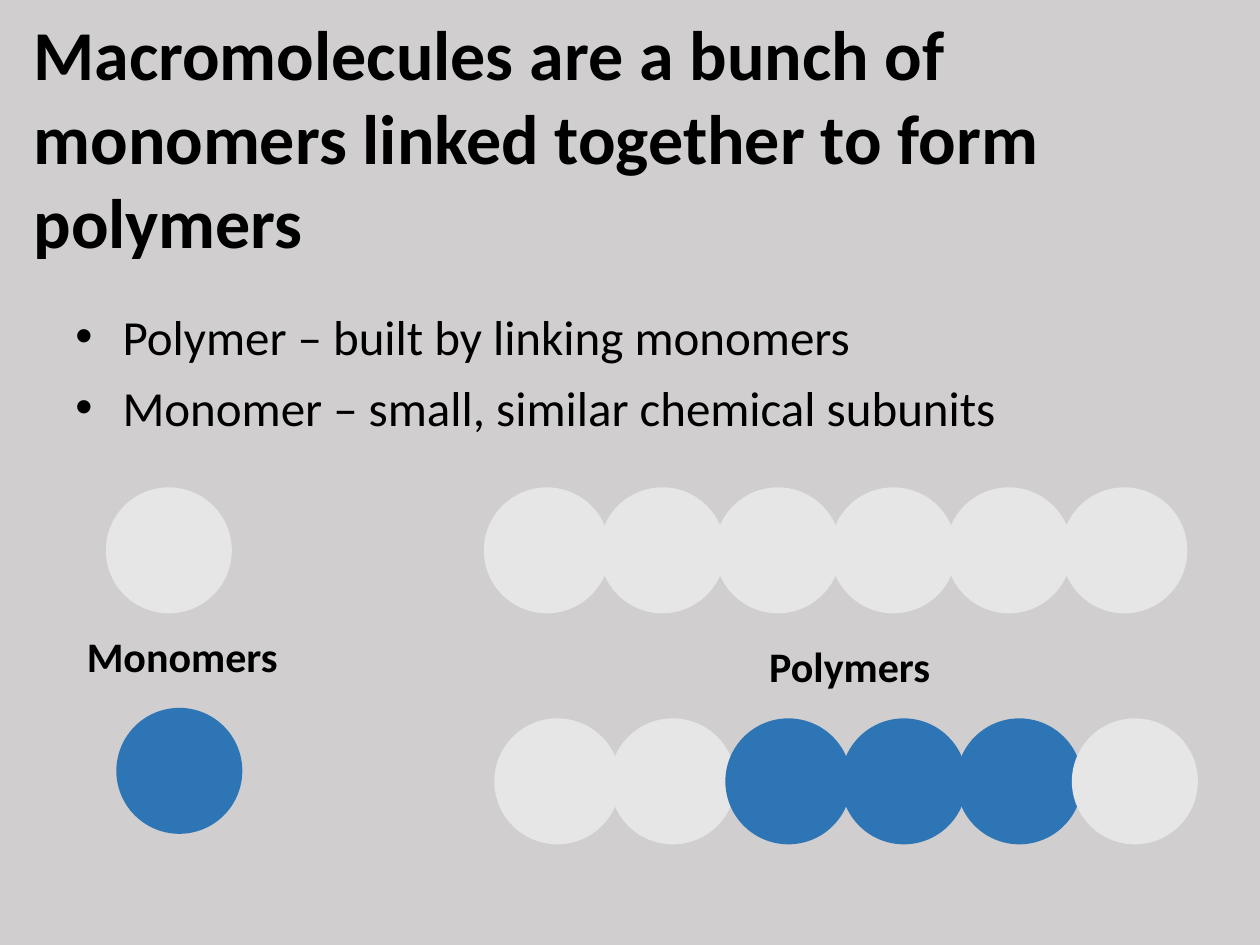
import pptx
import pptx.dml.color
import pptx.enum.shapes
import pptx.enum.text
import pptx.oxml
import pptx.util
from pptx.util import Pt

GREY, BLUE = "E7E6E6", "2E75B6"
DIAMETER = 72
LINK_STEP = 66


def color(hex_string):
    return pptx.dml.color.RGBColor.from_string(hex_string)


def write_text(shape, *lines, size, bold=False, anchor="TOP", space_before=0, bullet_indent=0):
    """Fill a shape with one left-aligned paragraph per line."""
    frame = shape.text_frame
    frame.word_wrap = True
    frame.auto_size = pptx.enum.text.MSO_AUTO_SIZE.NONE
    frame.vertical_anchor = pptx.enum.text.MSO_ANCHOR[anchor]
    frame.text = "\n".join(lines)
    for paragraph in frame.paragraphs:
        paragraph.alignment = pptx.enum.text.PP_ALIGN.LEFT
        paragraph.space_before = Pt(space_before)
        font = paragraph.runs[0].font
        font.name, font.size, font.bold = "Calibri", Pt(size), bold
        font.color.rgb = color("000000")
        if bullet_indent:
            properties = paragraph._p.get_or_add_pPr()
            properties.set("marL", str(Pt(bullet_indent)))
            properties.set("indent", str(-Pt(bullet_indent)))
            namespace = "http://schemas.openxmlformats.org/drawingml/2006/main"
            for tag in (f'<a:buFont xmlns:a="{namespace}" typeface="Arial"/>',
                        f'<a:buChar xmlns:a="{namespace}" char="•"/>'):
                properties.append(pptx.oxml.parse_xml(tag))


presentation = pptx.Presentation()
presentation.slide_width, presentation.slide_height = Pt(720), Pt(540)
slide = presentation.slides.add_slide(presentation.slide_layouts.get_by_name("Title Only"))
slide.background.fill.solid()
slide.background.fill.fore_color.rgb = color("D0CECE")

title = slide.shapes.title
title.left, title.top, title.width, title.height = Pt(12), Pt(33), Pt(688), Pt(90)
write_text(title, "Macromolecules are a bunch of monomers linked together to form polymers",
           size=40, bold=True, anchor="MIDDLE")

definitions = slide.shapes.add_textbox(Pt(36), Pt(171.5), Pt(648), Pt(311))
write_text(definitions, "Polymer – built by linking monomers",
           "Monomer – small, similar chemical subunits",
           size=28, space_before=7, bullet_indent=27)

# Each chain: left, top, and the colours of its circles from left to right
chains = [
    (60.5, 278.5, [GREY]),
    (276.5, 278.5, [GREY] * 6),
    (66.5, 404.5, [BLUE]),
    (282.5, 410.5, [GREY] * 2 + [BLUE] * 3 + [GREY]),
]
for left, top, fills in chains:
    for index, fill in enumerate(fills):
        circle = slide.shapes.add_shape(
            pptx.enum.shapes.MSO_SHAPE.OVAL,
            Pt(left + index * LINK_STEP), Pt(top), Pt(DIAMETER), Pt(DIAMETER))
        circle.shadow.inherit = False
        circle.fill.solid()
        circle.fill.fore_color.rgb = color(fill)
        circle.line.fill.background()

for label, left, top, width in [("Monomers", 42.5, 356.5, 162), ("Polymers", 432.5, 362.5, 174)]:
    label_box = slide.shapes.add_textbox(Pt(left), Pt(top), Pt(width), Pt(36.5))
    write_text(label_box, label, size=24, bold=True)

presentation.save("out.pptx")
